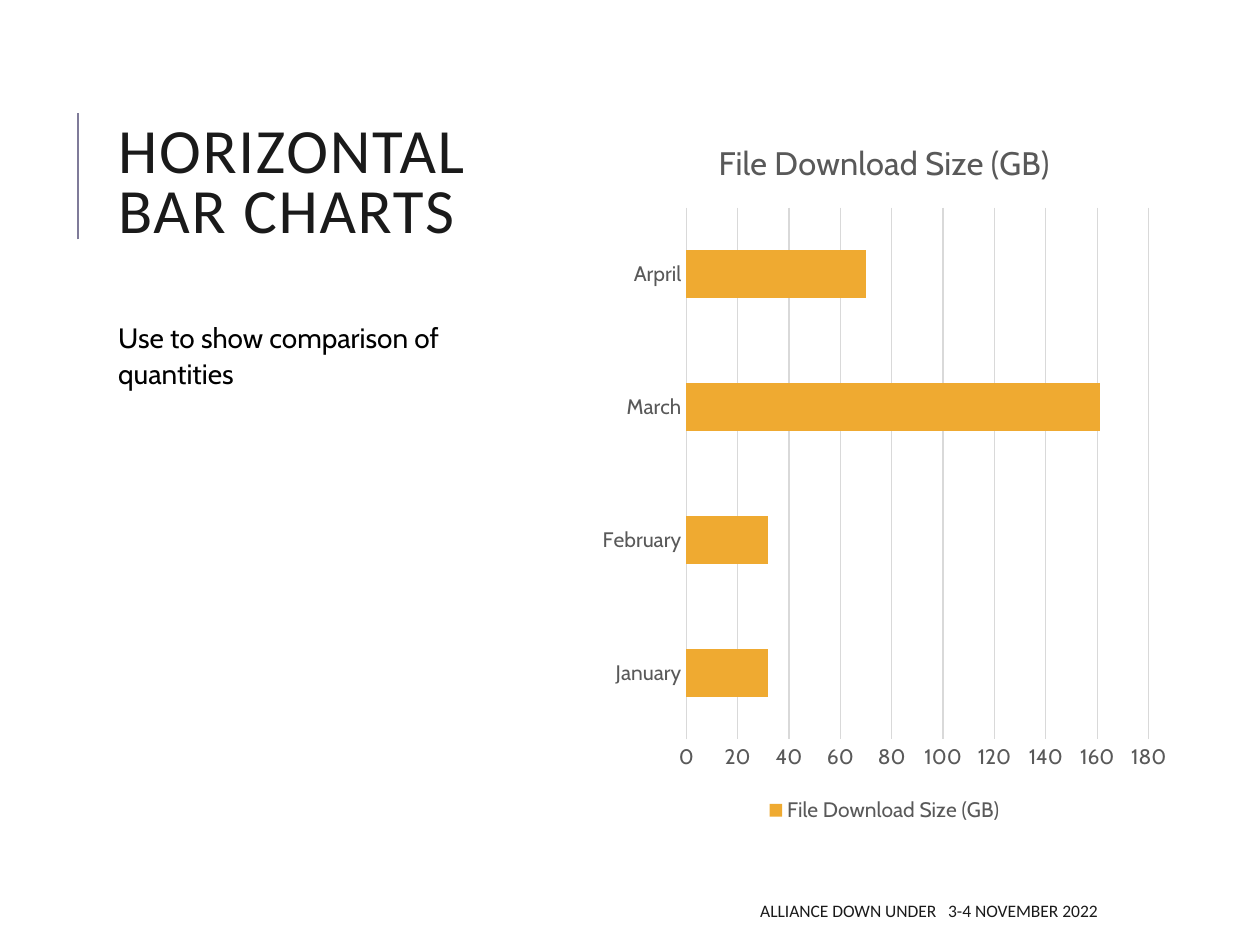
"""Build a slide that explains horizontal bar charts beside an example chart."""
from dataclasses import dataclass

from pptx import Presentation
from pptx import util as u
from pptx.chart.data import CategoryChartData
from pptx.dml.color import RGBColor
from pptx.enum import chart as ch
from pptx.enum import shapes, text
from pptx.oxml import xmlchemy
from pptx.oxml.ns import qn

INK = RGBColor(0x1A, 0x1A, 0x1A)
BLACK = RGBColor(0, 0, 0)
GREY = RGBColor(0x59, 0x59, 0x59)
GRID = RGBColor(0xD9, 0xD9, 0xD9)
ORANGE = RGBColor(0xEF, 0xAA, 0x31)
ACCENT = RGBColor(0x7F, 0x7B, 0x99)
HEADING_FONT = "Calibri"
BODY_FONT = "Cabin"
LEFT_COLUMN = 60.48
COLUMN_WIDTH = 259.2
RULE_X, RULE_TOP, RULE_BOTTOM = 44.64, 64.8, 136.8


@dataclass(frozen=True)
class Piece:
    """A run of text with its letter spacing in points."""
    wording: str
    spacing: float = 0


@dataclass(frozen=True)
class TextBlock:
    """A one-paragraph text box, measured in points."""
    left: float
    top: float
    width: float
    height: float
    pieces: tuple[Piece, ...]
    size: float
    font: str
    color: RGBColor
    anchor: text.MSO_ANCHOR = text.MSO_ANCHOR.MIDDLE
    align: text.PP_ALIGN = text.PP_ALIGN.LEFT
    line_spacing: float = 1.0
    before: float = 0
    after: float = 0


BLOCKS = (
    TextBlock(LEFT_COLUMN, 37.44, COLUMN_WIDTH, 136.8,
              (Piece("HORIZONTAL BAR CHARTS", 1),),
              36, HEADING_FONT, INK, line_spacing=0.8),
    TextBlock(LEFT_COLUMN, 177.84, COLUMN_WIDTH, 295.92,
              (Piece("Use to show comparison of quantities"),),
              16, BODY_FONT, BLACK, anchor=text.MSO_ANCHOR.TOP,
              line_spacing=1.08, before=6, after=2),
    TextBlock(285.84, 509.76, 348.48, 21.6,
              (Piece("ALLIANCE DOWN UNDER"), Piece(" ", 4.5),
               Piece("3-4 NOVEMBER 2022")),
              10, HEADING_FONT, INK, align=text.PP_ALIGN.RIGHT),
)


def style_font(font, size: float, name: str, color: RGBColor) -> None:
    """Set the size, typeface, colour and regular weight of a font."""
    font.size = u.Pt(size)
    font.name = name
    font.bold = False
    font.color.rgb = color


def style_line(line, color: RGBColor, width: float) -> None:
    """Set the colour and width of a line."""
    line.color.rgb = color
    line.width = u.Pt(width)


def draw_text(slide, block: TextBlock) -> None:
    """Draw a text block run by run."""
    box = slide.shapes.add_textbox(u.Pt(block.left), u.Pt(block.top),
                                   u.Pt(block.width), u.Pt(block.height))
    frame = box.text_frame
    frame.word_wrap = True
    frame.vertical_anchor = block.anchor
    paragraph = frame.paragraphs[0]
    paragraph.alignment = block.align
    paragraph.line_spacing = block.line_spacing
    paragraph.space_before = u.Pt(block.before)
    paragraph.space_after = u.Pt(block.after)
    for piece in block.pieces:
        run = paragraph.add_run()
        run.text = piece.wording
        style_font(run.font, block.size, block.font, block.color)
        if piece.spacing:
            run._r.get_or_add_rPr().set("spc", str(int(piece.spacing * 100)))


def draw_title_rule(slide) -> None:
    """Draw the upright rule beside the title."""
    rule = slide.shapes.add_connector(
        shapes.MSO_CONNECTOR.STRAIGHT, u.Pt(RULE_X), u.Pt(RULE_BOTTOM),
        u.Pt(RULE_X), u.Pt(RULE_TOP))
    style_line(rule.line, ACCENT, 1.5)
    properties = rule._element.spPr
    properties.append(properties.makeelement(qn("a:effectLst"), {}))


def draw_download_chart(slide) -> None:
    """Draw the bar chart of download sizes by month."""
    downloads = CategoryChartData()
    downloads.categories = ("January", "February", "March", "Arpril")
    downloads.add_series("File Download Size (GB)", (32, 32, 161, 70))
    chart = slide.shapes.add_chart(
        ch.XL_CHART_TYPE.BAR_CLUSTERED, u.Pt(337.68), u.Pt(64.8),
        u.Pt(335.52), u.Pt(408.24), downloads).chart
    style_font(chart.font, 10, BODY_FONT, BLACK)

    chart.has_title = True
    heading = chart.chart_title.text_frame.paragraphs[0].add_run()
    heading.text = "File Download Size (GB)"
    style_font(heading.font, 18.6, BODY_FONT, GREY)
    chart.chart_title.include_in_layout = False

    chart.has_legend = True
    chart.legend.position = ch.XL_LEGEND_POSITION.BOTTOM
    chart.legend.include_in_layout = False
    style_font(chart.legend.font, 12, BODY_FONT, GREY)

    months, sizes = chart.category_axis, chart.value_axis
    for axis in (months, sizes):
        axis.major_tick_mark = ch.XL_TICK_MARK.NONE
        axis.minor_tick_mark = ch.XL_TICK_MARK.NONE
        style_font(axis.tick_labels.font, 12, BODY_FONT, GREY)
    months.has_major_gridlines = False
    style_line(months.format.line, GRID, 0.75)
    sizes.minimum_scale, sizes.maximum_scale, sizes.major_unit = 0, 180, 20
    sizes.format.line.fill.background()
    sizes.has_major_gridlines = True
    style_line(sizes.major_gridlines.format.line, GRID, 0.75)

    plot = chart.plots[0]
    plot.gap_width = 182
    plot.vary_by_categories = False
    bars = plot.series[0].format.fill
    bars.solid()
    bars.fore_color.rgb = ORANGE


def main() -> None:
    """Build and save the slide."""
    deck = Presentation()
    deck.slide_width, deck.slide_height = u.Pt(720), u.Pt(540)
    slide = deck.slides.add_slide(deck.slide_layouts[6])
    draw_title_rule(slide)
    draw_download_chart(slide)
    for block in BLOCKS:
        draw_text(slide, block)
    deck.save("out.pptx")


if __name__ == "__main__":
    main()
